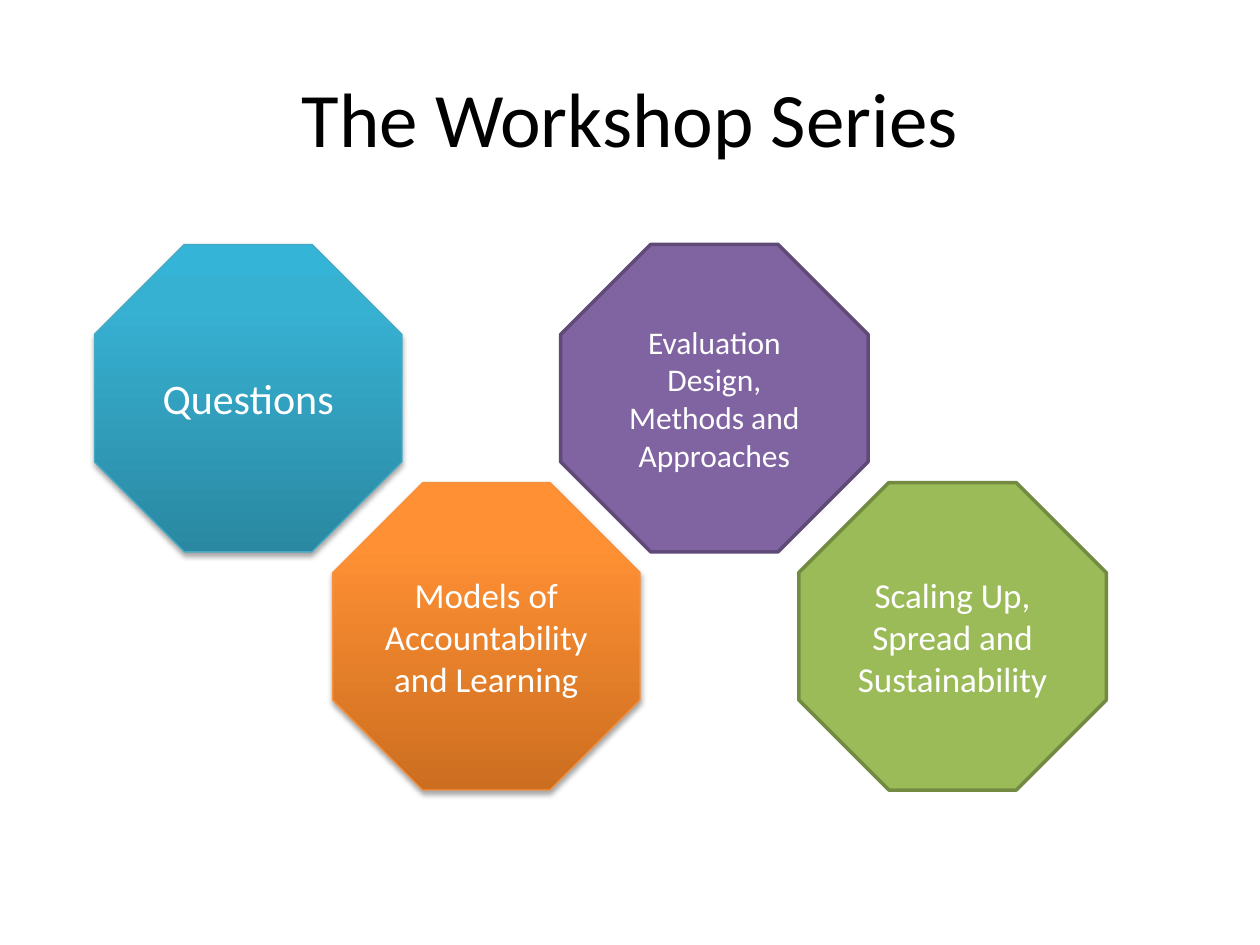
"""Build the workshop series slide with four staggered octagons."""
from copy import deepcopy

from lxml import etree
from pptx import Presentation
from pptx.dml.color import RGBColor
from pptx.enum.shapes import MSO_SHAPE
from pptx.enum.text import MSO_ANCHOR, PP_ALIGN
from pptx.oxml.ns import qn
from pptx.util import Pt

OCTAGON = MSO_SHAPE.OCTAGON
MIDDLE = MSO_ANCHOR.MIDDLE
CENTER = PP_ALIGN.CENTER

TITLE = "The Workshop Series"
WORKSHOPS = [
    {"text": "Questions", "size": 24, "style": "blue"},
    {"text": "Models of Accountability and Learning", "size": 20, "style": "orange"},
    {"text": "Evaluation Design, Methods and Approaches", "size": 18, "style": "purple"},
    {"text": "Scaling Up, Spread and Sustainability", "size": 20, "style": "green"},
]
THEME = {
    "font": "Calibri",
    "title_size": 44,
    "title_color": "000000",
    "text_color": "FFFFFF",
    "shadow_color": "000000",
    "stops": (0, 0.8, 1),
    "blue": {"fill": ("2A88A2", "37B1D2", "34B4D6"), "line": "46AAC5", "width": 0.75},
    "orange": {"fill": ("CC6E20", "FF9034", "FF9136"), "line": "F69240", "width": 0.75},
    "purple": {"fill": ("8064A2",), "line": "5F4A78", "width": 2},
    "green": {"fill": ("9BBB59",), "line": "738A42", "width": 2},
}
LEFT, TOP, SIDE = 54, 139.7, 175.7
STAGGER, PAIR_STEP = 136.1, 266.4


def write_text(shape, text, size, color):
    frame = shape.text_frame
    frame.text = text
    frame.word_wrap = True
    frame.vertical_anchor = MIDDLE
    paragraph = frame.paragraphs[0]
    paragraph.alignment = CENTER
    paragraph.font.name = THEME["font"]
    paragraph.font.size = Pt(size)
    paragraph.font.color.rgb = RGBColor.from_string(color)


def fill_gradient(shape, colors):
    shape.fill.gradient()
    shape.fill.gradient_angle = 90
    stop_list = shape.fill.gradient_stops
    stop_parent = shape._element.spPr.find(".//" + qn("a:gsLst"))
    stop_parent.append(deepcopy(stop_parent[-1]))
    stop_list = shape.fill.gradient_stops
    for stop, position, color in zip(stop_list, THEME["stops"], colors):
        stop.position = position
        stop.color.rgb = RGBColor.from_string(color)


def add_shadow(shape):
    effects = shape._element.spPr.find(qn("a:effectLst"))
    shadow = etree.SubElement(
        effects, qn("a:outerShdw"), blurRad=str(Pt(3.1)), dist=str(Pt(1.8)),
        dir="5400000", rotWithShape="0")
    color = etree.SubElement(shadow, qn("a:srgbClr"), val=THEME["shadow_color"])
    etree.SubElement(color, qn("a:alpha"), val="35000")


def add_workshop(slide, index, workshop):
    pair, lower = divmod(index, 2)
    left = LEFT + pair * PAIR_STEP + lower * STAGGER
    top = TOP + lower * STAGGER
    shape = slide.shapes.add_shape(OCTAGON, Pt(left), Pt(top), Pt(SIDE), Pt(SIDE))
    style = THEME[workshop["style"]]
    shape.line.color.rgb = RGBColor.from_string(style["line"])
    shape.line.width = Pt(style["width"])
    shape.shadow.inherit = False
    if len(style["fill"]) > 1:
        fill_gradient(shape, style["fill"])
        add_shadow(shape)
    else:
        shape.fill.solid()
        shape.fill.fore_color.rgb = RGBColor.from_string(style["fill"][0])
    write_text(shape, workshop["text"], workshop["size"], THEME["text_color"])
    if lower:
        shape.text_frame.margin_left = shape.text_frame.margin_right = Pt(0)


def main():
    presentation = Presentation()
    presentation.slide_width, presentation.slide_height = Pt(720), Pt(540)
    slide = presentation.slides.add_slide(presentation.slide_layouts[5])
    title = slide.shapes.title
    title.left, title.top, title.width, title.height = Pt(36), Pt(21.6), Pt(648), Pt(90)
    write_text(title, TITLE, THEME["title_size"], THEME["title_color"])
    for index, workshop in enumerate(WORKSHOPS):
        add_workshop(slide, index, workshop)
    presentation.save("out.pptx")


if __name__ == "__main__":
    main()
